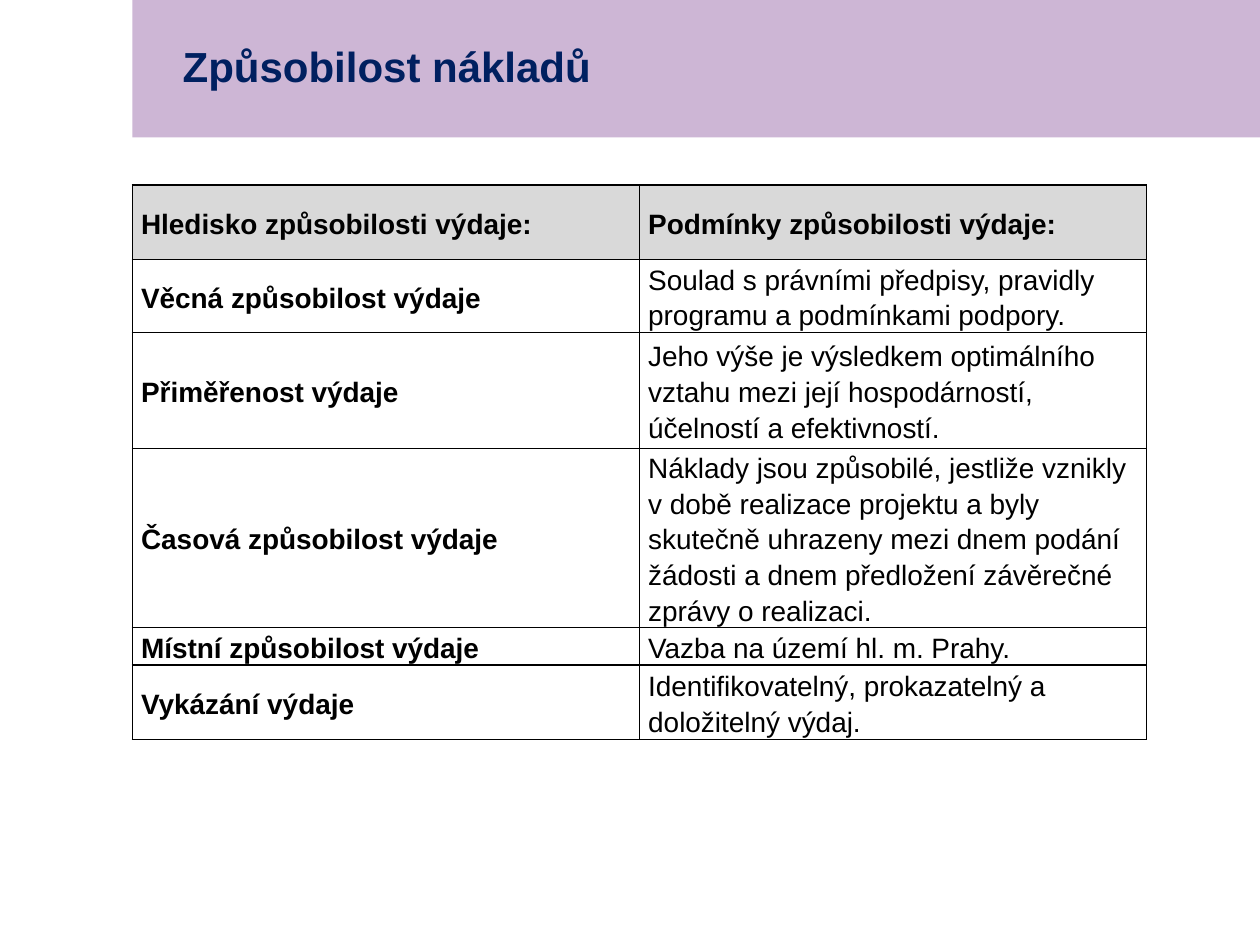
from pptx import Presentation
from pptx.dml.color import RGBColor
from pptx.enum import shapes, text
from pptx.oxml import parse_xml
from pptx.oxml.ns import nsdecls
from pptx.util import Inches, Pt

FONT = "Arial"
ROWS = [
    (0.59, "Hledisko způsobilosti výdaje:", "Podmínky způsobilosti výdaje:"),
    (0.58, "Věcná způsobilost výdaje",
     "Soulad s právními předpisy, pravidly programu a podmínkami podpory."),
    (0.92, "Přiměřenost výdaje",
     "Jeho výše je výsledkem optimálního vztahu mezi její hospodárností, "
     "účelností a efektivností."),
    (1.42, "Časová způsobilost výdaje",
     "Náklady jsou způsobilé, jestliže vznikly v době realizace projektu a byly "
     "skutečně uhrazeny mezi dnem podání žádosti a dnem předložení závěrečné "
     "zprávy o realizaci."),
    (0.3, "Místní způsobilost výdaje", "Vazba na území hl. m. Prahy."),
    (0.59, "Vykázání výdaje", "Identifikovatelný, prokazatelný a doložitelný výdaj."),
]


def set_fill(obj, color):
    obj.fill.solid()
    obj.fill.fore_color.rgb = RGBColor.from_string(color)


def write(tf, content, size=16, color="000000", bold=False, spacing=1.15):
    p = tf.paragraphs[0]
    p.alignment = text.PP_ALIGN.LEFT
    p.line_spacing = spacing
    r = p.add_run()
    r.text = content
    r.font.name = FONT
    r.font.size = Pt(size)
    r.font.bold = bold
    r.font.color.rgb = RGBColor.from_string(color)


def set_borders(cell, color="000000", width=1):
    tc_pr = cell._tc.get_or_add_tcPr()
    for i, side in enumerate(("lnL", "lnR", "lnT", "lnB")):
        tc_pr.insert(i, parse_xml(
            f'<a:{side} {nsdecls("a")} w="{Pt(width)}"><a:solidFill>'
            f'<a:srgbClr val="{color}"/></a:solidFill></a:{side}>'))


def add_header(s):
    """Place the title over a coloured band."""
    title = s.shapes.title
    band = s.shapes.add_shape(shapes.MSO_SHAPE.RECTANGLE, Inches(1.05), 0,
                              Inches(8.95), Inches(1.09))
    band.shadow.inherit = False
    set_fill(band, "CDB6D5")
    band.line.fill.background()
    title.element.addprevious(band.element)

    title.left, title.top = Inches(1.35), 0
    title.width, title.height = Inches(8.35), Inches(1.09)
    tf = title.text_frame
    tf.vertical_anchor = text.MSO_ANCHOR.MIDDLE
    write(tf, "Způsobilost nákladů", size=24, color="002060", bold=True, spacing=0.9)


def add_cost_table(s):
    height = sum(row[0] for row in ROWS)
    table = s.shapes.add_table(len(ROWS), 2, Inches(1.05), Inches(1.47),
                               Inches(8.05), Inches(height)).table
    table.horz_banding = False
    for i, (row_height, *contents) in enumerate(ROWS):
        table.rows[i].height = Inches(row_height)
        for j, content in enumerate(contents):
            cell = table.cell(i, j)
            cell.margin_left = cell.margin_right = Inches(0.07)
            cell.margin_top = cell.margin_bottom = 0
            cell.vertical_anchor = text.MSO_ANCHOR.MIDDLE
            set_fill(cell, "D9D9D9" if i == 0 else "FFFFFF")
            set_borders(cell)
            write(cell.text_frame, content, bold=i == 0 or j == 0)


def main():
    prs = Presentation()
    prs.slide_width, prs.slide_height = Inches(10), Inches(7.5)
    s = prs.slides.add_slide(prs.slide_layouts[5])
    add_header(s)
    add_cost_table(s)
    prs.save("out.pptx")


if __name__ == "__main__":
    main()
